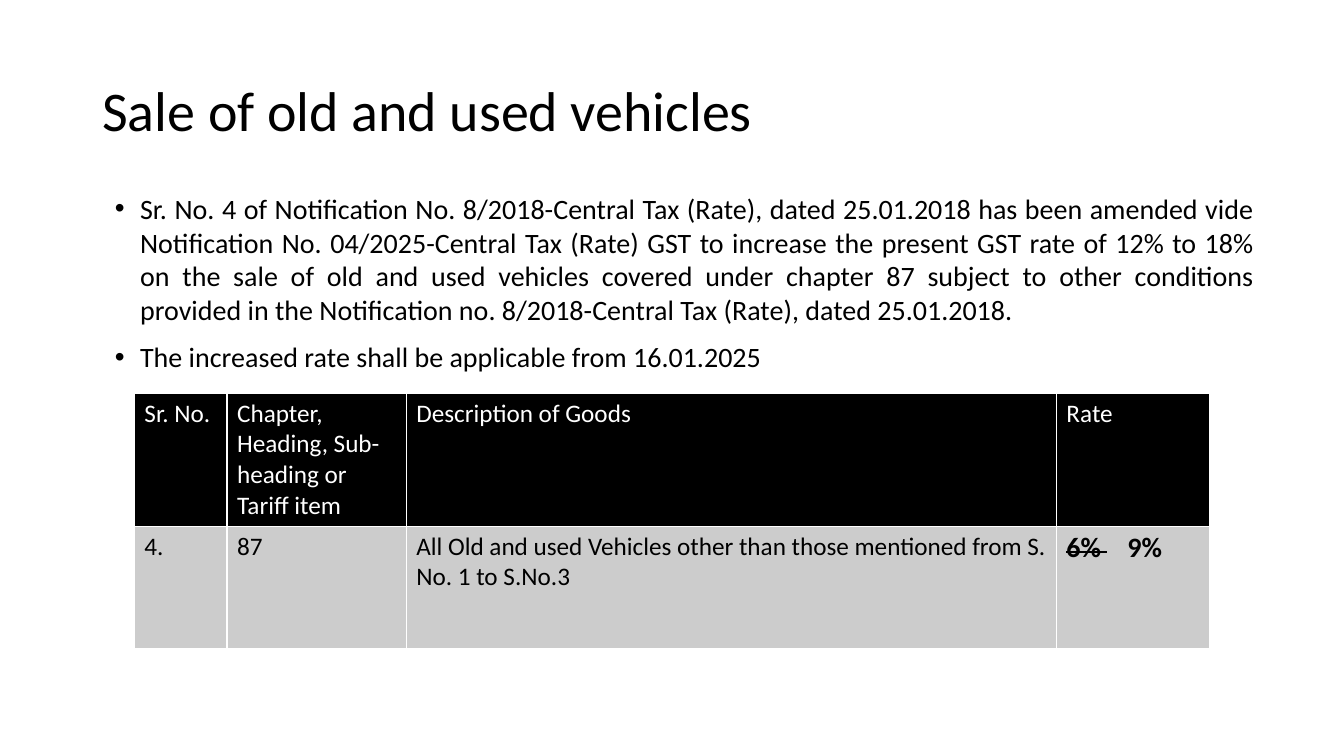
import pptx
import pptx.dml.color
import pptx.enum.text
import pptx.oxml
import pptx.oxml.ns
import pptx.util

Pt = pptx.util.Pt
ALIGN = pptx.enum.text.PP_ALIGN
ANCHOR = pptx.enum.text.MSO_ANCHOR
NAMESPACE = pptx.oxml.ns.nsdecls("a")
COLORS = {"black": "000000", "white": "FFFFFF", "gray": "CCCCCC"}


def rgb(name):
    return pptx.dml.color.RGBColor.from_string(COLORS[name])


def add_text(paragraph, text, size=18, color="black", bold=False, strike=False):
    run = paragraph.add_run()
    run.text = text
    run.font.name = "Calibri"
    run.font.size = Pt(size)
    run.font.bold = bold
    run.font.color.rgb = rgb(color)
    if strike:
        run._r.get_or_add_rPr().set("strike", "sngStrike")


presentation = pptx.Presentation()
presentation.slide_width = Pt(960)
presentation.slide_height = Pt(540)
slide = presentation.slides.add_slide(presentation.slide_layouts[6])

title = slide.shapes.add_textbox(Pt(66), Pt(28.75), Pt(828), Pt(104.4)).text_frame
title.word_wrap = True
title.vertical_anchor = ANCHOR.MIDDLE
title.paragraphs[0].line_spacing = 0.9
add_text(title.paragraphs[0], "Sale of old and used vehicles", size=40)

bullets = [
    "Sr. No. 4 of Notification No. 8/2018-Central Tax (Rate), dated 25.01.2018 has been "
    "amended vide Notification No. 04/2025-Central Tax (Rate) GST to increase the present "
    "GST rate of 12% to 18% on the sale of old and used vehicles covered under chapter 87 "
    "subject to other conditions provided in the Notification no. 8/2018-Central Tax (Rate), "
    "dated 25.01.2018.",
    "The increased rate shall be applicable from 16.01.2025",
]
body = slide.shapes.add_textbox(Pt(75), Pt(133.2), Pt(828), Pt(366.5)).text_frame
body.word_wrap = True
for index, text in enumerate(bullets):
    paragraph = body.add_paragraph() if index else body.paragraphs[0]
    properties = paragraph._p.get_or_add_pPr()
    properties.set("marL", str(Pt(18)))
    properties.set("indent", str(-Pt(18)))
    for bullet in ('<a:buFont {} typeface="Arial"/>', '<a:buChar {} char="•"/>'):
        properties.append(pptx.oxml.parse_xml(bullet.format(NAMESPACE)))
    paragraph.alignment = ALIGN.JUSTIFY
    if index:
        paragraph.space_before = Pt(10)
    add_text(paragraph, text, size=20)

rows = [
    ["Sr. No.", "Chapter, Heading, Sub-heading or Tariff item", "Description of Goods", "Rate"],
    ["4.", "87", "All Old and used Vehicles other than those mentioned from S. No. 1 to S.No.3", ""],
]
row_styles = [("black", "white", 95), ("gray", "black", 87.8)]
column_widths = [66.2, 128, 464.4, 109.4]
table = slide.shapes.add_table(
    2, 4, Pt(96), Pt(280.8), Pt(sum(column_widths)), Pt(182.8)
).table
for column, width in zip(table.columns, column_widths):
    column.width = Pt(width)
for row, texts, (fill, color, height) in zip(table.rows, rows, row_styles):
    row.height = Pt(height)
    for cell, text in zip(row.cells, texts):
        properties = cell._tc.get_or_add_tcPr()
        for side in ("lnL", "lnR", "lnT", "lnB"):
            properties.append(pptx.oxml.parse_xml(
                f'<a:{side} {NAMESPACE} w="{Pt(1)}"><a:solidFill>'
                f'<a:srgbClr val="{COLORS["white"]}"/></a:solidFill></a:{side}>'
            ))
        cell.fill.solid()
        cell.fill.fore_color.rgb = rgb(fill)
        if text:
            add_text(cell.text_frame.paragraphs[0], text, color=color)

rate = table.cell(1, 3).text_frame.paragraphs[0]
rate._p.get_or_add_pPr().append(pptx.oxml.parse_xml(
    f'<a:tabLst {NAMESPACE}><a:tab pos="{Pt(43.5)}" algn="l"/></a:tabLst>'
))
add_text(rate, "6% ", size=20, bold=True, strike=True)
add_text(rate, "\t9%", size=20, bold=True)

presentation.save("out.pptx")
